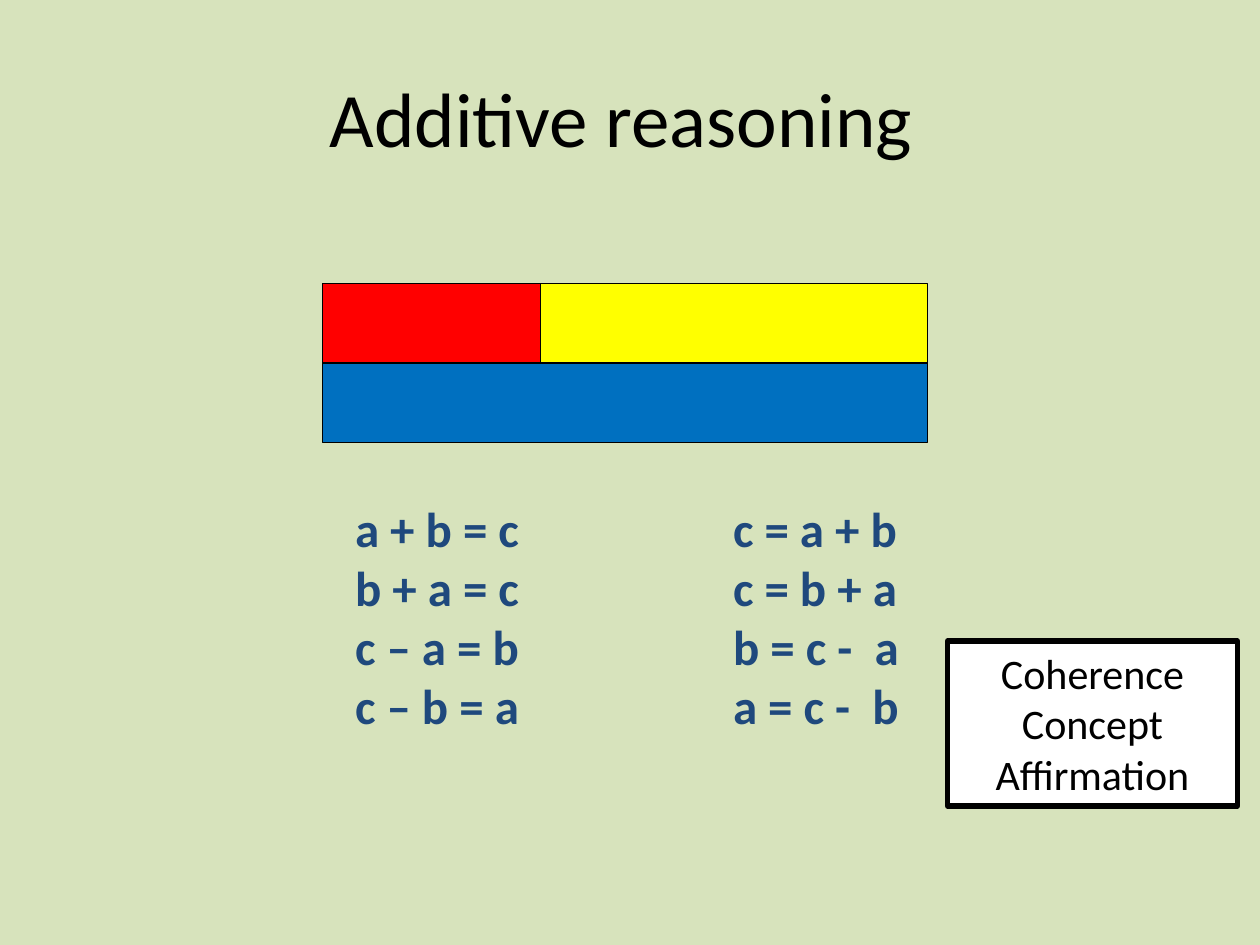
from lxml.etree import SubElement
from pptx import Presentation
from pptx.dml.color import RGBColor
from pptx.enum.shapes import MSO_SHAPE
from pptx.enum.text import MSO_ANCHOR, PP_ALIGN
from pptx.oxml.ns import qn
from pptx.util import Pt

COLORS = {
    "background": "D7E3BC", "black": "000000", "white": "FFFFFF",
    "red": "FF0000", "yellow": "FFFF00", "blue": "0070C0", "navy": "1F497D",
}
TITLE = "Additive reasoning "
EQUATIONS = [
    ("a + b = c", "c = a + b"),
    ("b + a = c", "c = b + a"),
    ("c – a = b", "b = c -  a"),
    ("c – b = a", "a = c -  b"),
]
TAB_STOPS = [72, 216, 288]
THEMES = ["Coherence", "Concept", "Affirmation"]

BAR_LEFT, BAR_TOP, BAR_HEIGHT = 184.2, 162.2, 45.3
PART_A, PART_B = 124.7, 221
# colour, offset from the left, row, width
BARS = [
    ("red", 0, 0, PART_A),
    ("blue", 0, 1, PART_A + PART_B),
    ("yellow", PART_A, 0, PART_B),
]


def color(name):
    return RGBColor.from_string(COLORS[name])


def add_rectangle(shapes, box, fill, line_width):
    shape = shapes.add_shape(MSO_SHAPE.RECTANGLE, *map(Pt, box))
    shape.shadow.inherit = False
    shape.fill.solid()
    shape.fill.fore_color.rgb = color(fill)
    shape.line.color.rgb = color("black")
    shape.line.width = Pt(line_width)
    return shape


def write(shape, lines, font_color, align, anchor, **font_values):
    frame = shape.text_frame
    frame.word_wrap = True
    frame.vertical_anchor = anchor
    frame.text = "\n".join(lines)
    for paragraph in frame.paragraphs:
        paragraph.alignment = align
        font = paragraph.runs[0].font
        font.color.rgb = color(font_color)
        for name, value in {"name": "Calibri", **font_values}.items():
            setattr(font, name, value)


def set_tab_stops(paragraph, stops):
    tab_list = SubElement(paragraph._p.get_or_add_pPr(), qn("a:tabLst"))
    for stop in stops:
        SubElement(tab_list, qn("a:tab"), pos=str(Pt(stop)), algn="l")


presentation = Presentation()
presentation.slide_width, presentation.slide_height = Pt(720), Pt(540)
slide = presentation.slides.add_slide(presentation.slide_layouts[6])
slide.background.fill.solid()
slide.background.fill.fore_color.rgb = color("background")

title = slide.shapes.add_textbox(Pt(36), Pt(21.6), Pt(648), Pt(90))
write(title, [TITLE], "black", PP_ALIGN.CENTER, MSO_ANCHOR.MIDDLE, size=Pt(44))

bar_model = slide.shapes.add_group_shape()
for fill, offset, row, width in BARS:
    box = (BAR_LEFT + offset, BAR_TOP + row * BAR_HEIGHT, width, BAR_HEIGHT)
    add_rectangle(bar_model.shapes, box, fill, 0.75)

equations = slide.shapes.add_textbox(Pt(123.8), Pt(281.5), Pt(517.7), Pt(143.3))
equation_lines = [f"\t{left}\t\t{right}" for left, right in EQUATIONS]
write(equations, equation_lines, "navy", PP_ALIGN.LEFT, MSO_ANCHOR.TOP,
      size=Pt(28), bold=True)
for paragraph in equations.text_frame.paragraphs:
    set_tab_stops(paragraph, TAB_STOPS)

themes = add_rectangle(slide.shapes, (541.5, 366.3, 165.6, 94.3), "white", 3)
write(themes, THEMES, "black", PP_ALIGN.CENTER, MSO_ANCHOR.TOP, size=Pt(24))

presentation.save("out.pptx")
